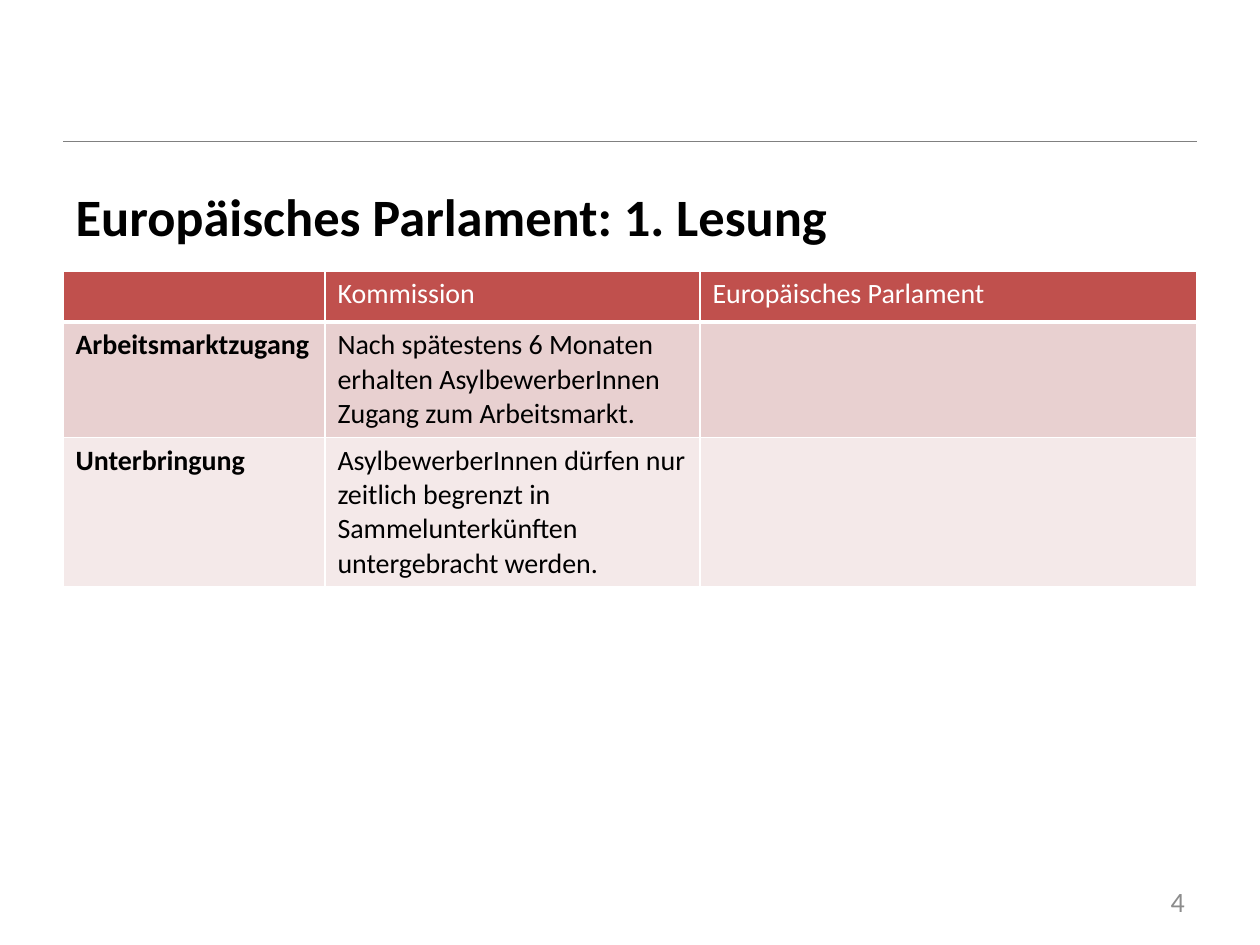
from dataclasses import dataclass

from lxml.etree import SubElement
from pptx import Presentation
from pptx.dml.color import RGBColor as RGB
from pptx.enum.shapes import MSO_CONNECTOR
from pptx.enum.text import MSO_ANCHOR, MSO_AUTO_SIZE, PP_ALIGN
from pptx.oxml.ns import qn
from pptx.util import Inches, Pt


@dataclass(frozen=True)
class Theme:
    font: str = "Calibri"
    title_size: int = 30
    body_size: int = 16
    black: str = "000000"
    white: str = "FFFFFF"
    rule: str = "808080"
    number: str = "8C8C8C"
    header: str = "C0504D"
    bands: tuple = ("E8D0D0", "F4E9E9")


THEME = Theme()
LEFT, WIDTH = 63, 1134
COLUMNS = (262, 375, 497)
ROW_HEIGHTS = (51, 115, 149)
ROWS = (
    ("", "Kommission", "Europäisches Parlament"),
    ("Arbeitsmarktzugang",
     "Nach spätestens 6 Monaten erhalten AsylbewerberInnen Zugang zum Arbeitsmarkt.", ""),
    ("Unterbringung",
     "AsylbewerberInnen dürfen nur zeitlich begrenzt in Sammelunterkünften "
     "untergebracht werden.", ""),
)


def px(n):
    return round(n * Inches(1) / 126)


def write(tf, text, size, color, bold=False, align=PP_ALIGN.LEFT):
    p = tf.paragraphs[0]
    p.text = text
    p.alignment = align
    p.font.name = THEME.font
    p.font.size = Pt(size)
    p.font.bold = bold
    p.font.color.rgb = RGB.from_string(color)


def add_rule(slide, y):
    s = slide.shapes.add_connector(
        MSO_CONNECTOR.STRAIGHT, px(LEFT), px(y), px(LEFT + WIDTH), px(y))
    s.line.color.rgb = RGB.from_string(THEME.rule)
    s.line.width = Pt(0.5)
    SubElement(s._element.spPr, qn("a:effectLst"))


def set_title(slide, text):
    s = slide.shapes.title
    s.left, s.top, s.width, s.height = px(LEFT), px(163), px(WIDTH), px(106)
    tf = s.text_frame
    tf.vertical_anchor = MSO_ANCHOR.MIDDLE
    tf.auto_size = MSO_AUTO_SIZE.NONE
    write(tf, text, THEME.title_size, THEME.black, bold=True)


def set_borders(cell, bottom):
    """Draw white cell edges, 1 pt wide except for the bottom one."""
    tc_pr = cell._tc.get_or_add_tcPr()
    for side, width in (("L", 1), ("R", 1), ("T", 1), ("B", bottom)):
        ln = SubElement(tc_pr, qn(f"a:ln{side}"), w=str(Pt(width)))
        fill = SubElement(ln, qn("a:solidFill"))
        SubElement(fill, qn("a:srgbClr"), val=THEME.white)


def fill_cell(cell, text, row, col):
    is_header = row == 0
    set_borders(cell, bottom=3 if is_header else 1)
    band = THEME.header if is_header else THEME.bands[(row - 1) % 2]
    cell.fill.solid()
    cell.fill.fore_color.rgb = RGB.from_string(band)
    write(cell.text_frame, text, THEME.body_size,
          THEME.white if is_header else THEME.black,
          bold=col == 0 and not is_header)


def add_comparison(slide, top):
    table = slide.shapes.add_table(
        len(ROWS), len(COLUMNS), px(LEFT), px(top), px(WIDTH), px(sum(ROW_HEIGHTS))).table
    for column, width in zip(table.columns, COLUMNS):
        column.width = px(width)
    for row, height in zip(table.rows, ROW_HEIGHTS):
        row.height = px(height)
    for r, texts in enumerate(ROWS):
        for c, text in enumerate(texts):
            fill_cell(table.cell(r, c), text, r, c)


def add_page_number(slide, number):
    s = slide.shapes.add_textbox(px(903), px(876), px(294), px(50))
    tf = s.text_frame
    tf.word_wrap = True
    tf.vertical_anchor = MSO_ANCHOR.MIDDLE
    write(tf, number, THEME.body_size, THEME.number, align=PP_ALIGN.RIGHT)


def main():
    prs = Presentation()
    prs.slide_width, prs.slide_height = px(1260), px(945)
    slide = prs.slides.add_slide(prs.slide_layouts[5])
    add_rule(slide, 141)
    set_title(slide, "Europäisches Parlament: 1. Lesung")
    add_comparison(slide, 271)
    add_page_number(slide, "4")
    prs.save("out.pptx")


if __name__ == "__main__":
    main()
